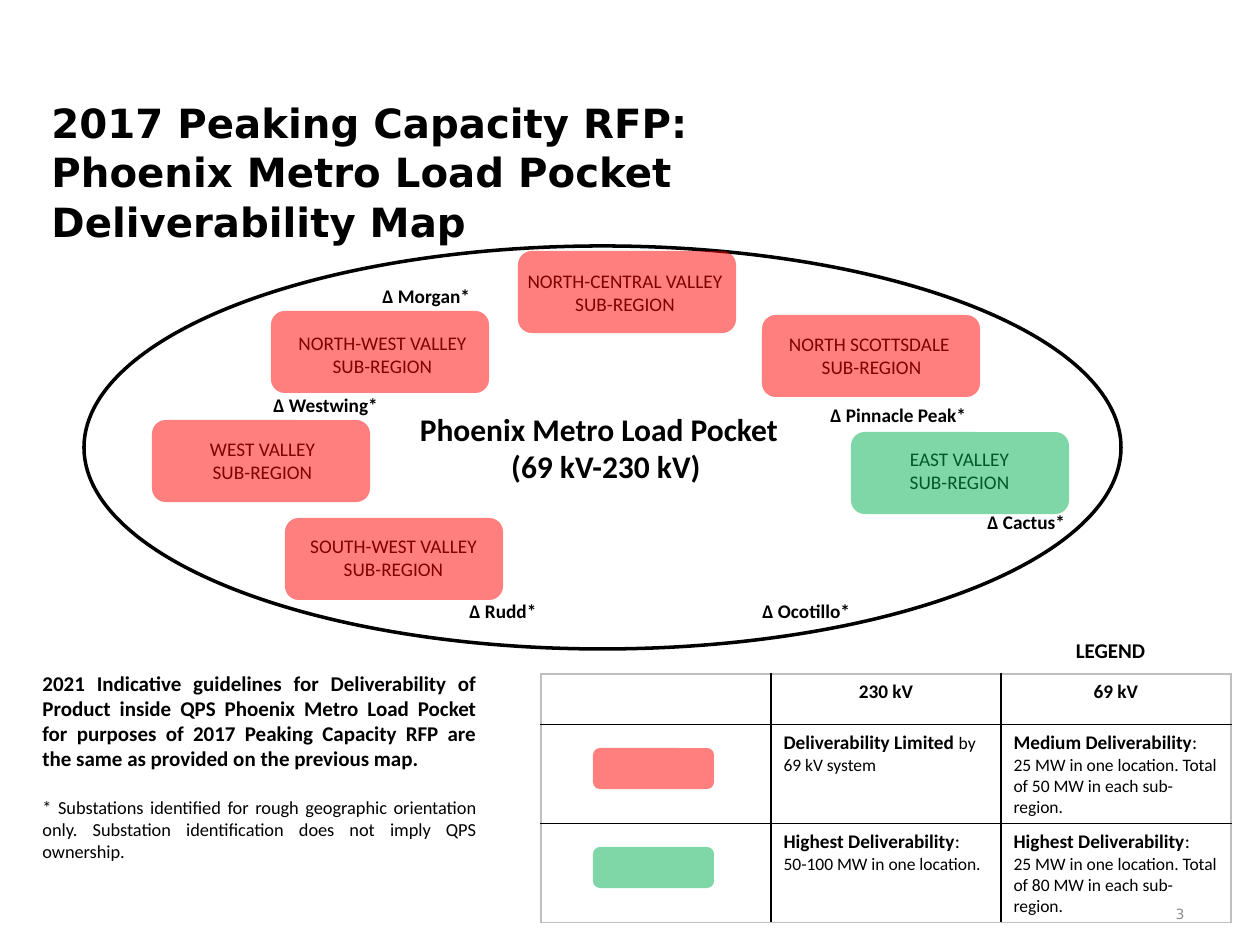
from lxml import etree
from pptx import Presentation
from pptx.dml.color import RGBColor
from pptx.enum.shapes import MSO_SHAPE
from pptx.enum.text import MSO_ANCHOR, PP_ALIGN
from pptx.oxml.ns import qn
from pptx.util import Pt

PX = 914400 / 126
LEFT, CENTER, RIGHT, JUSTIFY = PP_ALIGN.LEFT, PP_ALIGN.CENTER, PP_ALIGN.RIGHT, PP_ALIGN.JUSTIFY
MIDDLE = MSO_ANCHOR.MIDDLE
ELLIPSE, ROUNDED = MSO_SHAPE.OVAL, MSO_SHAPE.ROUNDED_RECTANGLE
BLACK, EDGE_GREY, RED, GREEN = "000000", "BFBFBF", "FF0000", "00B050"


def px(*lengths):
    return [round(n * PX) for n in lengths]


def write(frame, paragraphs, align=LEFT, font="Calibri", color=BLACK):
    """Fill a frame; each paragraph is a list of (text, size, bold) runs."""
    frame.word_wrap = True
    for i, runs in enumerate(paragraphs):
        p = frame.paragraphs[0] if i == 0 else frame.add_paragraph()
        p.alignment = align
        for text, size, bold in runs:
            run = p.add_run()
            run.text = text
            style = {"name": font, "size": Pt(size), "bold": bold}
            for key, value in style.items():
                setattr(run.font, key, value)
            run.font.color.rgb = RGBColor.from_string(color)


prs = Presentation()
prs.slide_width, prs.slide_height = px(1260, 945)
shapes = prs.slides.add_slide(prs.slide_layouts[6]).shapes

# Slide number and title
number = shapes.add_textbox(*px(903, 901, 294, 25)).text_frame
number.vertical_anchor = MIDDLE
write(number, [[("3", 8, False)]], RIGHT, "DejaVu Sans", "8C8C8C")

title = shapes.add_textbox(*px(39, 115, 862, 112)).text_frame
title.vertical_anchor = MIDDLE
write(title, [[("2017 Peaking Capacity RFP:", 23, True)],
              [("Phoenix Metro Load Pocket Deliverability Map", 23, True)]], font="DejaVu Sans")
for line in title.paragraphs:
    line.line_spacing = 1.03

# Load pocket
pocket = shapes.add_shape(ELLIPSE, *px(84, 246, 1037, 403))
pocket.shadow.inherit = False
pocket.fill.background()
pocket.line.color.rgb = RGBColor.from_string(BLACK)
pocket.line.width = Pt(2)
pocket.text_frame.vertical_anchor = MIDDLE
write(pocket.text_frame, [[("Phoenix Metro Load Pocket ", 18, True)],
                          [(" (69 kV-230 kV)", 18, True)]], CENTER)

# Sub-region names, lying under their tinted blocks
regions = [
    ("NORTH-WEST VALLEY SUB-REGION", 271, 325, 223),
    ("WEST VALLEY SUB-REGION", 190, 431, 145),
    ("SOUTH-WEST VALLEY SUB-REGION", 284, 528, 219),
    ("NORTH-CENTRAL VALLEY SUB-REGION", 501, 263, 248),
    ("NORTH SCOTTSDALE \nSUB-REGION", 755, 326, 233),
    ("EAST VALLEY\nSUB-REGION", 886, 441, 147),
]
for name, x, y, width in regions:
    label = shapes.add_textbox(*px(x, y, width, 59)).text_frame
    write(label, [[(line, 11, False)] for line in name.split("\n")], CENTER)

# Table of deliverability by voltage
legend = shapes.add_table(3, 3, *px(541, 674, 690, 248)).table
legend.first_row = legend.horz_banding = False
for column in legend.columns:
    column.width = px(230)[0]
for row, height in zip(legend.rows, (50, 99, 99)):
    row.height = px(height)[0]

entries = {
    (0, 1): [[("230 kV", 11, True)]],
    (0, 2): [[("69 kV", 11, True)]],
    (1, 1): [[("Deliverability Limited ", 11, True), ("by 69 kV system", 10, False)]],
    (1, 2): [[("Medium Deliverability", 11, True), (":", 11, False)],
             [("25 MW in one location. Total of 50 MW in each sub-region.", 10, False)]],
    (2, 1): [[("Highest Deliverability", 11, True), (":", 11, False)],
             [("50-100 MW in one location.", 10, False)]],
    (2, 2): [[("Highest Deliverability", 11, True), (":", 11, False)],
             [("25 MW in one location. Total of 80 MW in each sub-region.", 10, False)]],
}
for r in range(3):
    for c in range(3):
        cell = legend.cell(r, c)
        outer = {"lnL": c == 0, "lnR": c == 2, "lnT": r == 0, "lnB": r == 2}
        props = cell._tc.get_or_add_tcPr()
        for side, on_edge in outer.items():
            border = etree.SubElement(props, qn(f"a:{side}"), w=str(Pt(1)))
            fill = etree.SubElement(border, qn("a:solidFill"))
            etree.SubElement(fill, qn("a:srgbClr"), val=EDGE_GREY if on_edge else BLACK)
        cell.fill.background()
        if (r, c) in entries:
            write(cell.text_frame, entries[r, c], CENTER if r == 0 else LEFT)

# Half-transparent sub-region blocks and legend keys
REGION, KEY = (218, 82), (121, 41)
blocks = [
    (518, 251, REGION, RED), (271, 311, REGION, RED), (762, 315, REGION, RED),
    (152, 420, REGION, RED), (285, 518, REGION, RED), (851, 432, REGION, GREEN),
    (593, 748, KEY, RED), (593, 847, KEY, GREEN),
]
for x, y, size, color in blocks:
    block = shapes.add_shape(ROUNDED, *px(x, y, *size))
    block.shadow.inherit = False
    block.line.fill.background()
    block.fill.solid()
    block.fill.fore_color.rgb = RGBColor.from_string(color)
    tint = block._element.spPr.find(f"{qn('a:solidFill')}/{qn('a:srgbClr')}")
    etree.SubElement(tint, qn("a:alpha"), val="50000")

# Substations
substations = [
    ("Rudd", 457, 593, 94), ("Westwing", 261, 387, 168), ("Morgan", 370, 278, 117),
    ("Pinnacle Peak", 818, 397, 168), ("Cactus", 975, 504, 108), ("Ocotillo", 750, 593, 122),
]
for name, x, y, width in substations:
    station = shapes.add_textbox(*px(x, y, width, 37)).text_frame
    write(station, [[(f"Δ {name}*", 11, True)]])

# Legend heading and guidelines
heading = shapes.add_textbox(*px(989, 631, 243, 38)).text_frame
write(heading, [[("LEGEND", 12, True)]], CENTER)

guidelines = shapes.add_textbox(*px(30, 664, 459, 207)).text_frame
write(guidelines, [
    [("2021 Indicative guidelines for Deliverability of Product inside QPS Phoenix Metro Load "
      "Pocket for purposes of 2017 Peaking Capacity RFP are the same as provided on the "
      "previous map.", 12, True)],
    [("* Substations identified for rough geographic orientation only. Substation "
      "identification does not imply QPS ownership. ", 10.5, False)],
], JUSTIFY)
guidelines.paragraphs[1].space_before = Pt(14.5)

prs.save("out.pptx")
